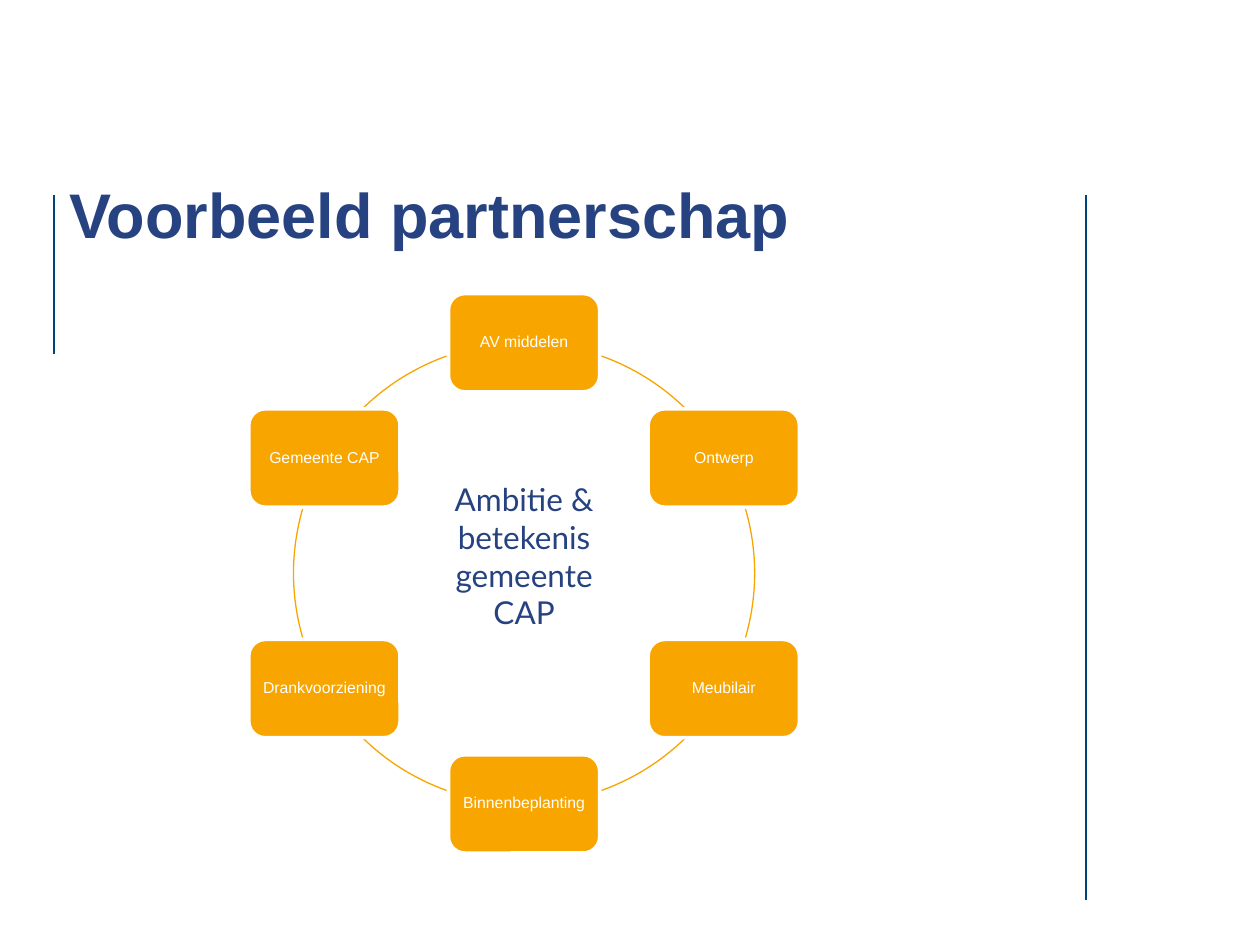
import math
from dataclasses import dataclass

import pptx
import pptx.dml.color
import pptx.enum.shapes
import pptx.enum.text
import pptx.oxml
import pptx.oxml.ns
import pptx.util
from pptx.util import Inches


@dataclass(frozen=True)
class Theme:
    rule: str = "00447A"
    accent: str = "F8A500"
    light: str = "FFFFFF"
    heading: str = "264280"
    title_size: float = 36
    centre_size: float = 18
    partner_size: float = 9
    font: str = "Arial"
    centre_font: str = "Lato"


THEME = Theme()
PARTNERS = ["AV middelen", "Ontwerp", "Meubilair",
            "Binnenbeplanting", "Drankvoorziening", "Gemeente CAP"]
CENTRE_X, CENTRE_Y, RADIUS = 4.16, 4.55, 1.83
PARTNER_WIDTH, PARTNER_HEIGHT = 1.2, 0.78
# Degrees clockwise from three o'clock; the left half is the right half turned by 180.
RIGHT_ARCS = [(-70.5, -45.6), (-16.2, 16.2), (45.6, 70.5)]


def rgb(value):
    return pptx.dml.color.RGBColor.from_string(value)


def set_line(line, color, width):
    line.color.rgb = rgb(color)
    line.width = pptx.util.Pt(width)


def write_centred(frame, text, color, line_spacing=1.0, **font_format):
    frame.word_wrap = True
    paragraph = frame.paragraphs[0]
    paragraph.alignment = pptx.enum.text.PP_ALIGN.CENTER
    paragraph.line_spacing = line_spacing
    run = paragraph.add_run()
    run.text = text
    run.font.color.rgb = rgb(color)
    for attribute, value in font_format.items():
        setattr(run.font, attribute, value)


def add_rule(slide, x, top, bottom):
    rule = slide.shapes.add_connector(
        pptx.enum.shapes.MSO_CONNECTOR.STRAIGHT,
        Inches(x), Inches(top), Inches(x), Inches(bottom))
    set_line(rule.line, THEME.rule, 1)
    properties = rule.element.find(pptx.oxml.ns.qn("p:spPr"))
    properties.append(pptx.oxml.parse_xml(
        f'<a:effectLst {pptx.oxml.ns.nsdecls("a")}/>'))


def add_text(slide, text, left, top, width, height, **font_format):
    box = slide.shapes.add_textbox(
        Inches(left), Inches(top), Inches(width), Inches(height))
    write_centred(box.text_frame, text, THEME.heading, **font_format)


def add_partner(slide, name, angle):
    x = CENTRE_X + RADIUS * math.cos(angle)
    y = CENTRE_Y + RADIUS * math.sin(angle)
    partner = slide.shapes.add_shape(
        pptx.enum.shapes.MSO_SHAPE.ROUNDED_RECTANGLE,
        Inches(x - PARTNER_WIDTH / 2), Inches(y - PARTNER_HEIGHT / 2),
        Inches(PARTNER_WIDTH), Inches(PARTNER_HEIGHT))
    partner.shadow.inherit = False
    partner.fill.solid()
    partner.fill.fore_color.rgb = rgb(THEME.accent)
    set_line(partner.line, THEME.light, 2)
    frame = partner.text_frame
    frame.vertical_anchor = pptx.enum.text.MSO_ANCHOR.MIDDLE
    for side in ("left", "top", "right", "bottom"):
        setattr(frame, f"margin_{side}", Inches(0.04))
    write_centred(frame, name, THEME.light, line_spacing=0.9,
                  size=pptx.util.Pt(THEME.partner_size), name=THEME.font)


def add_arc(slide, start, end):
    """Draw part of the ring between two angles in degrees."""
    arc = slide.shapes.add_shape(
        pptx.enum.shapes.MSO_SHAPE.ARC,
        Inches(CENTRE_X - RADIUS), Inches(CENTRE_Y - RADIUS),
        Inches(2 * RADIUS), Inches(2 * RADIUS))
    arc.shadow.inherit = False
    arc.fill.background()
    set_line(arc.line, THEME.accent, 0.75)
    for index, degrees in enumerate((start, end)):
        # Angles are stored in 1/60000 degree, adjustments in 1/100000.
        arc.adjustments[index] = degrees % 360 * 0.6


def add_partner_ring(slide):
    for turn in (0, 180):
        for start, end in RIGHT_ARCS:
            add_arc(slide, start + turn, end + turn)
    for index, name in enumerate(PARTNERS):
        add_partner(slide, name, math.tau * index / len(PARTNERS) - math.pi / 2)


def main():
    presentation = pptx.Presentation()
    presentation.slide_width = Inches(10)
    presentation.slide_height = Inches(7.5)
    slide = presentation.slides.add_slide(presentation.slide_layouts[6])
    add_rule(slide, 8.62, 1.55, 7.14)
    add_rule(slide, 0.43, 1.55, 2.81)
    add_partner_ring(slide)
    add_text(slide, "Voorbeeld partnerschap", 0.14, 1.34, 6.54, 0.71,
             size=pptx.util.Pt(THEME.title_size), name=THEME.font, bold=True)
    add_text(slide, "Ambitie & betekenis gemeente CAP", 3.41, 3.76, 1.5, 1.31,
             size=pptx.util.Pt(THEME.centre_size), name=THEME.centre_font)
    presentation.save("out.pptx")


if __name__ == "__main__":
    main()
